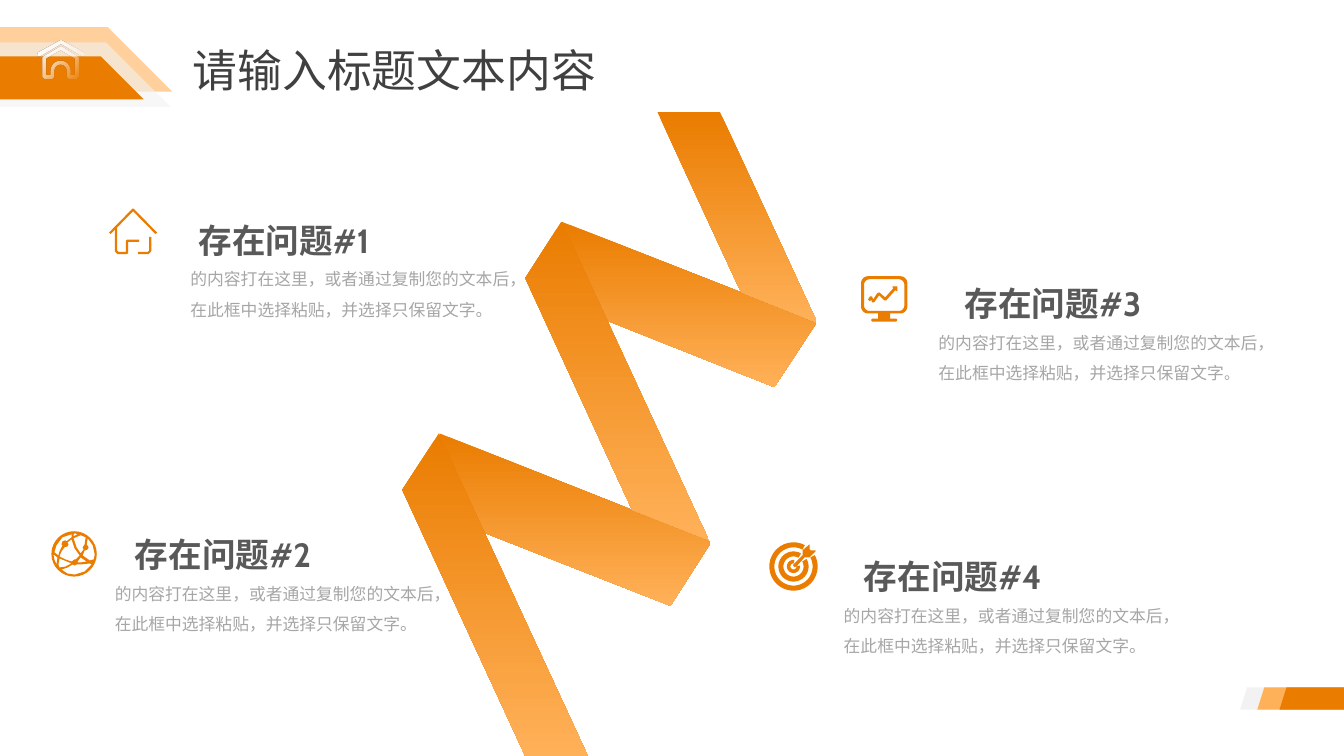
from collections import namedtuple
from dataclasses import dataclass
from math import cos, radians, sin

from lxml.etree import SubElement
from pptx import Presentation
from pptx.dml.color import RGBColor
from pptx.enum.lang import MSO_LANGUAGE_ID as Language
from pptx.enum.text import MSO_ANCHOR as Anchor, MSO_AUTO_SIZE as AutoSize, PP_ALIGN as Align
from pptx.oxml.ns import qn
from pptx.util import Inches, Pt

# The slide is a grid of 1333 columns and 750 rows; one cell is 0.01 inch.
COLS, ROWS = 1333, 750
CELL = Inches(0.01)
FINE = 100  # freeform steps in one cell

Issue = namedtuple("Issue", "number icon heading_at body_at body_width stop_size")


@dataclass(frozen=True)
class Theme:
    orange: str = "EA7C00"
    peach: str = "FFB159"
    mist: str = "F2F2F2"
    white: str = "FFFFFF"
    title_ink: str = "404040"
    heading_ink: str = "595959"
    body_ink: str = "A6A6A6"
    title_font: str = "Roboto"
    text_font: str = "Cabin"
    title_size: int = 32
    heading_size: int = 24
    body_size: int = 12
    stop_size: int = 11
    icon_stroke: float = 1.6


THEME = Theme()
BODY = "的内容打在这里，或者通过复制您的文本后，在此框中选择粘贴，并选择只保留文字"


def arc(cx, cy, radius, start, end, steps=32):
    """Points along an arc; degrees run anticlockwise from the right."""
    angles = [radians(start + (end - start) * i / steps) for i in range(steps + 1)]
    return [(cx + radius * cos(a), cy - radius * sin(a)) for a in angles]


def rounded(left, top, right, bottom, radius):
    corners = [(right - radius, top + radius, 0), (left + radius, top + radius, 90),
               (left + radius, bottom - radius, 180), (right - radius, bottom - radius, 270)]
    return [p for x, y, start in corners for p in arc(x, y, radius, start, start + 90, 6)]


def target_ring(outer, inner, start, end):
    """A ring around the target's centre that stays open for the dart."""
    return arc(787, 562, outer, end, start + 360) + arc(787, 562, inner, start + 360, end)


HOME_BADGE = [
    [(84, 55), (82, 56), (81, 56), (60.5, 44), (40, 56), (38, 56), (37, 55), (38, 52),
     (60, 40), (61, 40), (83, 52), (84, 53)],
    [(78, 57), (78, 76), (76, 78), (68, 78), (66, 76), *arc(60, 70, 6, 0, 180, 12),
     (54, 76), (52, 78), (44, 78), (42, 76), (42, 57), (43, 56), (60, 46), (61, 46), (77, 56)],
    [(74, 58), (60, 50), (46, 58), (46, 74), (50, 74), *arc(60, 70, 10, 180, 0, 12),
     (70, 74), (74, 74)],
]
HOUSE = [
    [(109, 231.5), (132, 208), (155, 231.5)],
    [(115, 226), (115, 249), (117, 251), (126, 251), (126, 239), (138, 239)],
    [(149, 235), (149, 249), (147, 251), (137, 251)],
]
GLOBE = [
    arc(73.5, 549.5, 22.5, 0, 360),
    [(85, 533), (84, 540), (82, 543), (83, 545), (80, 549), (76, 543), (73, 534), (80, 531)],
    [(80, 553), (86, 557), (80, 558), (77, 558), (77, 557)],
    [(74, 529), (77, 530), (73, 532), (73, 530)],
    [(79, 551), (75, 555), (74, 555), (71, 557), (65, 555), (59, 552), (61, 547), (64, 543),
     (67, 542), (68, 540), (67, 538), (71, 535), (74, 544)],
    [(56, 560), (54, 555), (53, 550), (57, 553)],
    [(58, 551), (54, 548), (56, 541), (62, 533), (71, 530), (71, 533), (66, 537), (65, 536),
     (62, 537), (61, 540), (62, 541), (59, 547)],
    [(59, 563), (58, 560), (59, 554), (71, 559), (65, 562)],
    [(74, 570), (67, 569), (61, 565), (67, 563), (72, 560), (74, 561), (76, 560), (80, 560),
     (89, 559), (91, 560), (84, 567)],
    [(89, 556), (82, 551), (84, 546), (85, 546), (87, 545), (88, 543), (86, 540), (87, 534),
     (92, 541), (94, 550), (93, 555)],
]
MONITOR = [
    rounded(854, 274, 900, 311, 7),
    rounded(857, 277, 897, 308.5, 5.5),
    [(871, 311), (871, 316), (865, 316), (864, 317.5), (865, 319), (889, 319),
     (890, 317.5), (889, 316), (883, 316), (883, 311)],
    [(863, 299), (864, 297), (865, 300), (867, 300), (872, 293), (877, 298), (879, 298),
     (888, 288), (890, 289), (890, 284), (885, 284), (886, 286), (878, 295), (872, 290),
     (870, 291), (866, 297), (865, 294), (863, 294), (861, 297)],
]
DART = [(803, 540), (803, 545), (804, 546), (809, 546), (809, 547), (803, 553), (799, 553),
        (798, 553), (790, 562), (788, 562.5), (786.5, 561), (787, 560), (796, 551),
        (796, 546)]
TARGET_PARTS = [target_ring(24, 19, 28, 62), target_ring(15, 10, 30, 60), DART,
                target_ring(6.5, 3, 8, 82)]
RIBBON = [
    [(436, 430), (703, 536), (704, 540), (665, 601), (423, 506)],
    [(557, 220), (735, 290), (810, 320), (774, 375), (768, 384), (544, 295)],
    [(810, 320), (735, 290), (652, 111), (714, 111), (810, 319)],
    [(434, 432), (435, 430), (583, ROWS), (521, ROWS), (399, 486)],
    [(521, 276), (556, 221), (557, 220), (703, 536), (627, 506)],
]
ISSUES = [
    Issue(1, [HOUSE], (187, 213), (179, 252), 340, THEME.body_size),
    Issue(2, [GLOBE], (124, 525), (104, 564), 340, THEME.body_size),
    Issue(3, [MONITOR], (947, 276), (921, 315), 360, THEME.stop_size),
    Issue(4, [[part] for part in TARGET_PARTS], (847, 547), (827, 586), 353, THEME.body_size),
]


def outline(shapes, contours, closed=True):
    """Build one bare freeform from lists of (column, row) points."""
    builder = None
    for contour in contours:
        start, *rest = [(x * FINE, y * FINE) for x, y in contour]
        if builder is None:
            builder = shapes.build_freeform(*start, scale=CELL / FINE)
        else:
            builder.move_to(*start)
        builder.add_line_segments(rest, close=closed)
    shape = builder.convert_to_shape()
    shape.shadow.inherit = False
    shape.fill.background()
    shape.line.fill.background()
    return shape


def set_alpha(color, percent):
    SubElement(color, qn("a:alpha")).set("val", str(percent * 1000))


def paint(shape, color, alpha=100):
    shape.fill.solid()
    shape.fill.fore_color.rgb = RGBColor.from_string(color)
    if alpha < 100:
        set_alpha(next(shape.element.spPr.iter(qn("a:srgbClr"))), alpha)


def paint_gradient(shape, colors, clockwise, first_stop=0):
    shape.fill.gradient()
    shape.fill.gradient_angle = 360 - clockwise
    for stop, color, position in zip(shape.fill.gradient_stops, colors, (first_stop, 1)):
        stop.color.rgb = RGBColor.from_string(color)
        stop.position = position


def stroke(shape, color, width):
    shape.line.color.rgb = RGBColor.from_string(color)
    shape.line.width = Pt(width)


def write(frame, text, *, size, color, font, bold=False, align=None, spacing=None):
    """Append a formatted run to the frame's first paragraph."""
    paragraph = frame.paragraphs[0]
    if align is not None:
        paragraph.alignment = align
    if spacing is not None:
        paragraph.line_spacing = spacing
    run = paragraph.add_run()
    run.text = text
    run.font.size, run.font.bold, run.font.name = Pt(size), bold, font
    run.font.color.rgb = RGBColor.from_string(color)
    run.font.language_id = Language.SIMPLIFIED_CHINESE
    SubElement(run.font._element, qn("a:ea")).set("typeface", font)


def text_area(shapes, at, width, height):
    frame = shapes.add_textbox(*(CELL * n for n in (*at, width, height))).text_frame
    frame.word_wrap = True
    frame.auto_size = AutoSize.SHAPE_TO_FIT_TEXT
    return frame


def add_header(slide):
    bands = [(27, 107, 64, THEME.peach, 60), (42, 105, 64, THEME.mist, 60),
             (56, 100, 42.5, THEME.orange, 100)]
    for top, width, height, color, alpha in bands:
        corners = [(0, top), (width, top), (width + height, top + height), (0, top + height)]
        paint(outline(slide.shapes, [corners]), color, alpha)
    title = slide.shapes.title
    title.left, title.top, title.width, title.height = (CELL * n for n in (181, 37, 451, 64))
    frame = title.text_frame
    frame.word_wrap = True
    frame.vertical_anchor = Anchor.TOP
    frame.auto_size = AutoSize.SHAPE_TO_FIT_TEXT
    write(frame, "请输入标题文本内容", size=THEME.title_size, color=THEME.title_ink,
          font=THEME.title_font, align=Align.JUSTIFY)
    badge = outline(slide.shapes, HOME_BADGE)
    paint_gradient(badge, (THEME.white, THEME.white), clockwise=45, first_stop=0.1)
    set_alpha(list(badge.element.spPr.iter(qn("a:srgbClr")))[-1], 0)


def add_footer(slide):
    for left, color in ((1230, THEME.mist), (1247, THEME.peach), (1269, THEME.orange)):
        paint(outline(slide.shapes, [[(COLS, 704), (left, 704), (left + 7, 682), (COLS, 682)]]), color)


def add_ribbon(slide):
    group = slide.shapes.add_group_shape()
    for fold in RIBBON:
        paint_gradient(outline(group.shapes, [fold]), (THEME.orange, THEME.peach), clockwise=90)


def add_issue(slide, issue):
    shapes = slide.shapes.add_group_shape().shapes
    for part in issue.icon:
        if part is HOUSE:
            stroke(outline(shapes, part, closed=False), THEME.orange, THEME.icon_stroke)
        else:
            paint(outline(shapes, part), THEME.orange)
    body = text_area(shapes, issue.body_at, issue.body_width, 71)
    for text, size in ((BODY, THEME.body_size), ("。", issue.stop_size)):
        write(body, text, size=size, color=THEME.body_ink, font=THEME.text_font, spacing=1.5)
    write(text_area(shapes, issue.heading_at, 248, 50), f"存在问题#{issue.number}",
          size=THEME.heading_size, color=THEME.heading_ink, font=THEME.text_font, bold=True)


def main():
    deck = Presentation()
    deck.slide_width, deck.slide_height = CELL * COLS, CELL * ROWS
    slide = deck.slides.add_slide(deck.slide_layouts.get_by_name("Title Only"))
    add_header(slide)
    add_footer(slide)
    add_ribbon(slide)
    for issue in ISSUES:
        add_issue(slide, issue)
    deck.save("out.pptx")


if __name__ == "__main__":
    main()
